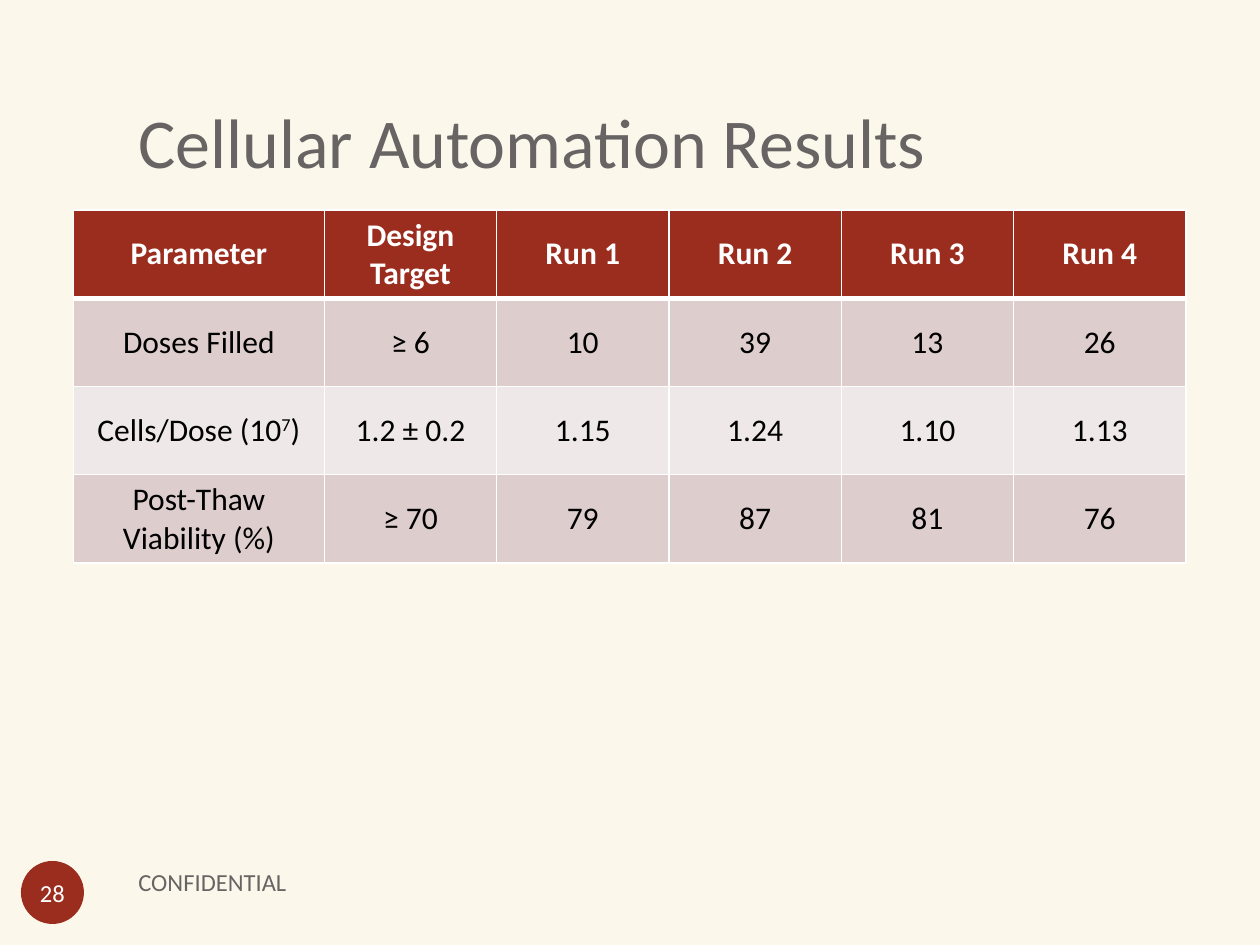
from pptx import Presentation
from pptx.dml.color import RGBColor
from pptx.enum.shapes import MSO_SHAPE
from pptx.enum.text import MSO_ANCHOR, MSO_AUTO_SIZE, PP_ALIGN
from pptx.util import Pt
from lxml.etree import SubElement
from pptx.oxml.ns import qn

COLORS = {
    "paper": "FBF8EB",
    "gray": "696464",
    "red": "9B2D1F",
    "rose": "DECDCD",
    "pale": "EFE8E8",
    "white": "FFFFFF",
    "black": "000000",
}

# A part between carets is raised
ROWS = [
    ["Parameter", "Design Target", "Run 1", "Run 2", "Run 3", "Run 4"],
    ["Doses Filled", "≥ 6", "10", "39", "13", "26"],
    ["Cells/Dose (10^7^)", "1.2 ± 0.2", "1.15", "1.24", "1.10", "1.13"],
    ["Post-Thaw Viability (%)", "≥ 70", "79", "87", "81", "76"],
]


class Deck:
    face = "Calibri"

    def __init__(self, wide, high):
        self.prs = Presentation()
        self.prs.slide_width, self.prs.slide_height = Pt(wide), Pt(high)
        self.slide = self.prs.slides.add_slide(self.prs.slide_layouts[5])
        self.paint(self.slide.background.fill, "paper")

    def paint(self, fill, color):
        fill.solid()
        fill.fore_color.rgb = RGBColor.from_string(COLORS[color])

    def style(self, para, size, color, align=PP_ALIGN.LEFT, bold=False):
        para.alignment = align
        for run in para.runs:
            font = run.font
            font.name, font.size, font.bold = self.face, Pt(size), bold
            font.color.rgb = RGBColor.from_string(COLORS[color])

    def inset(self, item, left, top, right, bottom):
        item.margin_left, item.margin_top = Pt(left), Pt(top)
        item.margin_right, item.margin_bottom = Pt(right), Pt(bottom)

    def title(self, text, x, y, w, h):
        shape = self.slide.shapes.title
        shape.left, shape.top, shape.width, shape.height = map(Pt, (x, y, w, h))
        frame = shape.text_frame
        frame.text = text
        frame.auto_size = MSO_AUTO_SIZE.NONE
        frame.vertical_anchor = MSO_ANCHOR.BOTTOM
        self.inset(frame, 7.2, 3.6, 7.2, 7.2)
        self.style(frame.paragraphs[0], 40, "gray")

    def label(self, text, x, y, w, h):
        frame = self.slide.shapes.add_textbox(*map(Pt, (x, y, w, h))).text_frame
        frame.text = text
        frame.word_wrap = True
        frame.vertical_anchor = MSO_ANCHOR.MIDDLE
        self.style(frame.paragraphs[0], 14, "gray")

    def badge(self, text, x, y, size):
        box = map(Pt, (x, y, size, size))
        shape = self.slide.shapes.add_shape(MSO_SHAPE.OVAL, *box)
        shape.shadow.inherit = False
        self.paint(shape.fill, "red")
        shape.line.fill.background()
        frame = shape.text_frame
        frame.text = text
        frame.word_wrap = False
        frame.vertical_anchor = MSO_ANCHOR.MIDDLE
        self.inset(frame, 0, 0, 0, 0)
        self.style(frame.paragraphs[0], 14, "white", PP_ALIGN.CENTER)

    def border(self, cell, **widths):
        props = cell._tc.get_or_add_tcPr()
        for side, width in widths.items():
            line = SubElement(props, qn(f"a:ln{side}"), w=str(Pt(width)))
            fill = SubElement(line, qn("a:solidFill"))
            SubElement(fill, qn("a:srgbClr"), val=COLORS["white"])

    def cell(self, cell, text, row):
        head = row == 0
        para = cell.text_frame.paragraphs[0]
        for i, part in enumerate(text.split("^")):
            run = para.add_run()
            run.text = part
            if i % 2:
                run._r.get_or_add_rPr().set("baseline", "30000")
        self.style(para, 18, "white" if head else "black", PP_ALIGN.CENTER, head)
        cell.vertical_anchor = MSO_ANCHOR.MIDDLE
        self.inset(cell, 10.8, 3.6, 10.8, 3.6)
        self.border(cell, L=1, R=1, T=3 if row == 1 else 1, B=3 if head else 1)
        self.paint(cell.fill, "red" if head else "rose" if row % 2 else "pale")

    def table(self, rows, x, y, widths, high):
        box = map(Pt, (x, y, sum(widths), high * len(rows)))
        grid = self.slide.shapes.add_table(len(rows), len(widths), *box).table
        for col, width in zip(grid.columns, widths):
            col.width = Pt(width)
        for r, texts in enumerate(rows):
            grid.rows[r].height = Pt(high)
            for c, text in enumerate(texts):
                self.cell(grid.cell(r, c), text, r)


def main():
    deck = Deck(720, 540)
    # Heading
    deck.title("Cellular Automation Results", 72, 21.6, 612, 90)
    # Footer and page number
    deck.label("CONFIDENTIAL", 72, 486, 312, 36)
    deck.badge("28", 12, 492, 36)
    # Results of the runs
    deck.table(ROWS, 42, 120, [143.3] + [98.5] * 5, 50.4)
    deck.prs.save("out.pptx")


if __name__ == "__main__":
    main()
